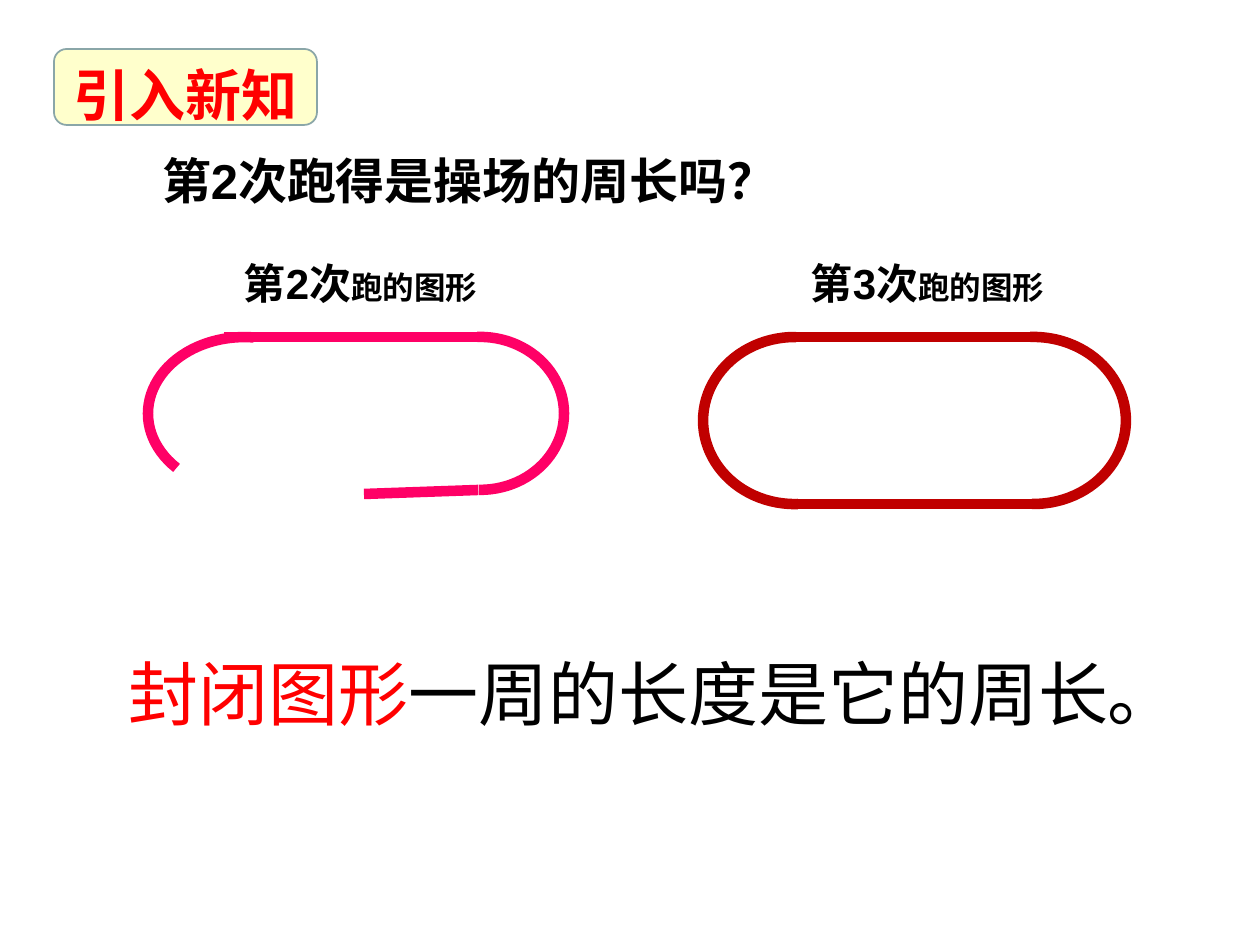
from dataclasses import dataclass

from lxml import etree
from pptx import Presentation
from pptx import util as u
from pptx.dml.color import RGBColor
from pptx.enum import shapes, text
from pptx.oxml.ns import qn

EMU_PER_PX = 914400 / 126
CJK = "Noto Sans CJK SC"
PINK, DARK_RED, RED, BLACK = "FF0066", "C00000", "FF0000", "000000"


@dataclass
class TrackLine:
    x1: int
    y1: int
    x2: int
    y2: int
    color: str


@dataclass
class TrackArc:
    left: int
    top: int
    width: int
    height: int
    color: str
    rotation: int = 0
    start: float = 160.72
    end: float = 54.66


@dataclass
class Span:
    words: str
    size: int
    color: str = BLACK
    bold: bool = False
    font: str = "Arial"


@dataclass
class TextBox:
    left: int
    top: int
    width: int
    height: int
    spans: list[Span]
    inset: int = 13


def px(length: int) -> int:
    """Turn pixels into EMU."""
    return round(length * EMU_PER_PX)


def rgb(color: str) -> RGBColor:
    """Turn a hex string into a colour."""
    return RGBColor.from_string(color)


def style_line(line, color: str, width: int) -> None:
    """Set the colour and the width in points of a line."""
    line.color.rgb = rgb(color)
    line.width = u.Pt(width)


def draw_line(slide, item: TrackLine) -> None:
    """Draw a straight piece of track."""
    connector = slide.shapes.add_connector(
        shapes.MSO_CONNECTOR.STRAIGHT, px(item.x1), px(item.y1), px(item.x2), px(item.y2))
    style_line(connector.line, item.color, 6)
    etree.SubElement(connector._element.spPr, qn("a:effectLst"))


def draw_arc(slide, item: TrackArc) -> None:
    """Draw a curved end of track."""
    arc = slide.shapes.add_shape(
        shapes.MSO_SHAPE.ARC, px(item.left), px(item.top), px(item.width), px(item.height))
    arc.adjustments[0] = item.start
    arc.adjustments[1] = item.end
    arc.rotation = item.rotation
    arc.shadow.inherit = False
    arc.fill.background()
    style_line(arc.line, item.color, 6)


def add_spans(paragraph, spans: list[Span]) -> None:
    """Write formatted runs into a paragraph."""
    for span in spans:
        run = paragraph.add_run()
        run.text = span.words
        run.font.size = u.Pt(span.size)
        run.font.bold = span.bold
        run.font.color.rgb = rgb(span.color)
        run.font.name = span.font
        etree.SubElement(run._r.get_or_add_rPr(), qn("a:ea"), typeface=CJK)


def draw_text(slide, item: TextBox) -> None:
    """Draw a wrapping text box."""
    box = slide.shapes.add_textbox(px(item.left), px(item.top), px(item.width), px(item.height))
    frame = box.text_frame
    frame.word_wrap = True
    frame.margin_left = px(item.inset)
    add_spans(frame.paragraphs[0], item.spans)


def draw_badge(slide) -> None:
    """Draw the rounded section heading."""
    badge = slide.shapes.add_shape(
        shapes.MSO_SHAPE.ROUNDED_RECTANGLE, px(54), px(49), px(263), px(76))
    badge.shadow.inherit = False
    badge.fill.solid()
    badge.fill.fore_color.rgb = rgb("FFFFCC")
    style_line(badge.line, "8AA6A8", 1)
    badge.text_frame.vertical_anchor = text.MSO_ANCHOR.MIDDLE
    paragraph = badge.text_frame.paragraphs[0]
    paragraph.alignment = text.PP_ALIGN.CENTER
    paragraph.line_spacing = 1.2
    add_spans(paragraph, [Span("引入新知", 32, RED, True, CJK)])


def track_label(left: int, width: int, lap: str) -> TextBox:
    """Describe the caption above a track."""
    spans = [Span(lap, 24, bold=True), Span("跑的图形", 18, bold=True)]
    return TextBox(left, 251, width, 63, spans, inset=34)


LINES = [
    TrackLine(364, 494, 478, 490, PINK),
    TrackLine(224, 337, 478, 337, PINK),
    TrackLine(796, 504, 1032, 504, DARK_RED),
    TrackLine(796, 337, 1032, 337, DARK_RED),
]
ARCS = [
    TrackArc(396, 337, 168, 153, PINK),
    TrackArc(148, 337, 193, 153, PINK, 180, 192.81, 58.13),
    TrackArc(941, 337, 185, 167, DARK_RED),
    TrackArc(703, 337, 183, 167, DARK_RED, 180),
]
TEXTS = [
    TextBox(116, 644, 1028, 97, [Span("封闭图形", 40, RED, font=CJK),
                                 Span("一周的长度是它的周长。", 40, font=CJK)]),
    TextBox(149, 144, 936, 72, [Span("第2次跑得是操场的周长吗？", 28, bold=True)]),
    track_label(210, 353, "第2次"),
    track_label(777, 325, "第3次"),
]


def main() -> None:
    """Build and save the slide."""
    presentation = Presentation()
    presentation.slide_width, presentation.slide_height = px(1260), px(945)
    slide = presentation.slides.add_slide(presentation.slide_layouts[6])
    for line in LINES:
        draw_line(slide, line)
    for arc in ARCS:
        draw_arc(slide, arc)
    draw_badge(slide)
    for box in TEXTS:
        draw_text(slide, box)
    presentation.save("out.pptx")


if __name__ == "__main__":
    main()
